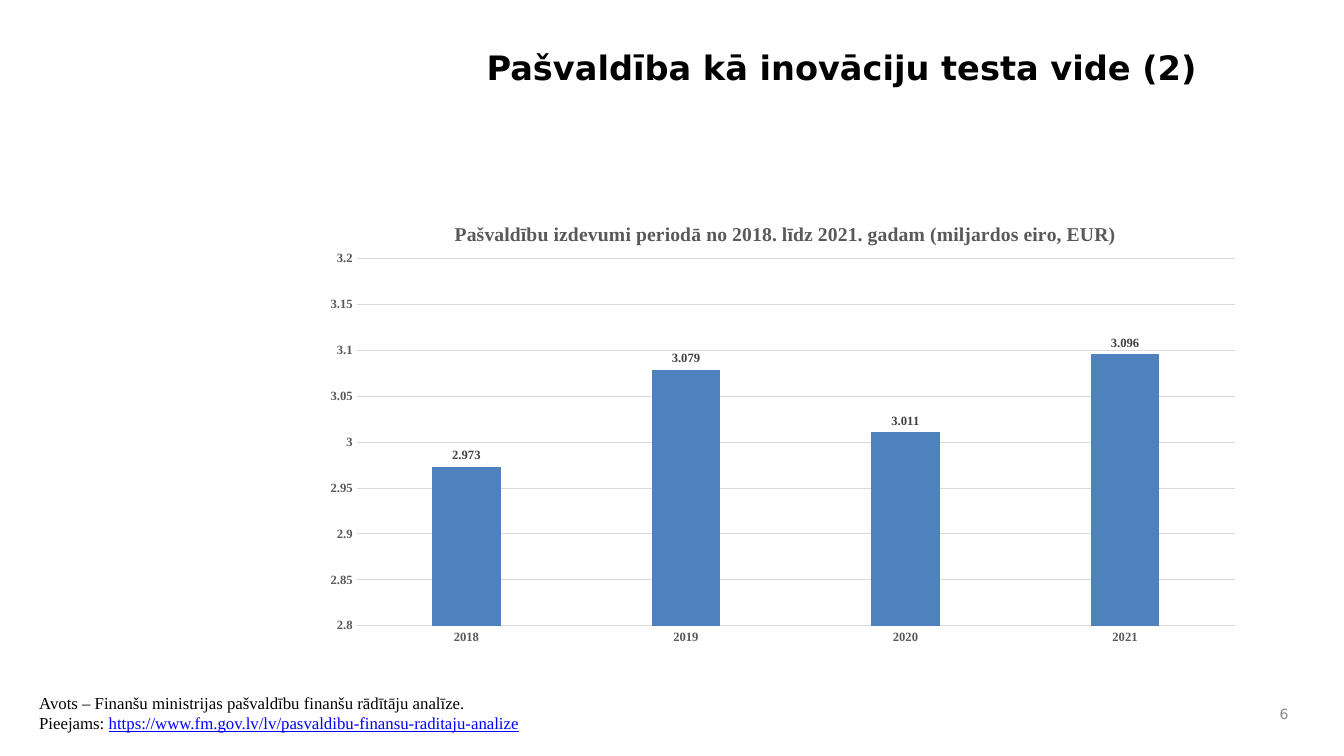
from pptx import Presentation
from pptx.chart.data import CategoryChartData
from pptx.dml.color import RGBColor
from pptx.enum.chart import XL_CHART_TYPE, XL_LABEL_POSITION, XL_TICK_MARK
from pptx.enum.text import MSO_ANCHOR, PP_ALIGN
from pptx.oxml import parse_xml
from pptx.oxml.ns import nsdecls, qn
from pptx.util import Pt

TITLE = "Pašvaldība kā inovāciju testa vide (2)"
PAGE_NUMBER = "6"
CHART_TITLE = "Pašvaldību izdevumi periodā no 2018. līdz 2021. gadam (miljardos eiro, EUR)"
SPENDING = {"2018": 2.973, "2019": 3.079, "2020": 3.011, "2021": 3.096}
# Each source line is a list of (text, style name)
SOURCE = [
    [("Avots – Finanšu ministrijas pašvaldību finanšu rādītāju analīze.", "source")],
    [("Pieejams: ", "source"),
     ("https://www.fm.gov.lv/lv/pasvaldibu-finansu-raditaju-analize", "address")],
]

SLIDE_SIZE = (960, 540)
# Left, top, width, height in points
BOXES = {
    "title": (324, 30.24, 554.4, 81.36),
    "chart": (221, 139, 674.6, 327.6),
    "source": (20.9, 491, 519, 36),
    "page": (895.7, 498.2, 31.7, 23.8),
}
SANS, SERIF = "DejaVu Sans", "Times New Roman"
THEME = {
    "bar": "4F81BD",
    "grid": "D9D9D9",
    "grid_width": 0.75,
    "fonts": {
        "title": {"name": SANS, "size": 24, "color": "000000", "bold": True},
        "page": {"name": SANS, "size": 10, "color": "898989"},
        "chart": {"name": SERIF, "size": 10, "color": "000000"},
        "chart_title": {"name": SERIF, "size": 14, "color": "595959", "bold": True},
        "axis": {"name": SERIF, "size": 9, "color": "595959", "bold": True},
        "label": {"name": SERIF, "size": 9, "color": "404040", "bold": True},
        "source": {"name": SERIF, "size": 12, "color": "000000"},
        "address": {"name": SERIF, "size": 12, "color": "0000FF", "underline": True},
    },
}


def style_font(font, style):
    for key, value in THEME["fonts"][style].items():
        if key == "color":
            font.color.rgb = RGBColor.from_string(value)
        else:
            setattr(font, key, Pt(value) if key == "size" else value)


def box(name):
    return [Pt(length) for length in BOXES[name]]


def add_text(slide, name, lines, **frame_format):
    frame = slide.shapes.add_textbox(*box(name)).text_frame
    frame.word_wrap = True
    for key, value in frame_format.items():
        setattr(frame, key, value)
    for index, line in enumerate(lines):
        paragraph = frame.add_paragraph() if index else frame.paragraphs[0]
        for text, style in line:
            run = paragraph.add_run()
            run.text = text
            style_font(run.font, style)
    return frame


def place_part(part, index, **fractions):
    """Fix a chart part's place, as fractions of the chart's size."""
    for layout in part.findall(qn("c:layout")):
        part.remove(layout)
    target = '<c:layoutTarget val="inner"/>' if "w" in fractions else ""
    modes = "".join(f'<c:{key}Mode val="edge"/>' for key in "xy")
    values = "".join(f'<c:{key} val="{value}"/>' for key, value in fractions.items())
    part.insert(index, parse_xml(
        f'<c:layout {nsdecls("c")}><c:manualLayout>{target}{modes}{values}'
        "</c:manualLayout></c:layout>"))


def style_grid_line(line):
    line.color.rgb = RGBColor.from_string(THEME["grid"])
    line.width = Pt(THEME["grid_width"])


def add_spending_chart(slide):
    spending = CategoryChartData(number_format="General")
    spending.categories = list(SPENDING)
    spending.add_series("Series 1", list(SPENDING.values()))
    chart = slide.shapes.add_chart(
        XL_CHART_TYPE.COLUMN_CLUSTERED, *box("chart"), spending).chart
    style_font(chart.font, "chart")
    chart.has_legend = False

    heading = chart.chart_title.text_frame.paragraphs[0].add_run()
    heading.text = CHART_TITLE
    style_font(heading.font, "chart_title")
    chart.chart_title.include_in_layout = False
    place_part(chart.element.find(".//" + qn("c:title")), 1, x=0.15, y=0.05)
    place_part(chart.element.find(".//" + qn("c:plotArea")), 0,
               x=0.05, y=0.14, w=0.93, h=0.8)

    years, amounts = chart.category_axis, chart.value_axis
    for axis in (years, amounts):
        axis.major_tick_mark = axis.minor_tick_mark = XL_TICK_MARK.NONE
        style_font(axis.tick_labels.font, "axis")
    style_grid_line(years.format.line)
    style_grid_line(amounts.major_gridlines.format.line)
    amounts.format.line.fill.background()
    for key, value in {"minimum_scale": 2.8, "maximum_scale": 3.2, "major_unit": 0.05}.items():
        setattr(amounts, key, value)

    plot = chart.plots[0]
    for key, value in {"gap_width": 219, "overlap": -27, "vary_by_categories": False,
                       "has_data_labels": True}.items():
        setattr(plot, key, value)
    plot.data_labels.show_value = True
    plot.data_labels.position = XL_LABEL_POSITION.OUTSIDE_END
    style_font(plot.data_labels.font, "label")
    bars = plot.series[0].format.fill
    bars.solid()
    bars.fore_color.rgb = RGBColor.from_string(THEME["bar"])


def main():
    deck = Presentation()
    deck.slide_width, deck.slide_height = [Pt(side) for side in SLIDE_SIZE]
    slide = deck.slides.add_slide(deck.slide_layouts[5])

    title = slide.shapes.title
    title.left, title.top, title.width, title.height = box("title")
    title.text_frame.text = TITLE
    title.text_frame.vertical_anchor = MSO_ANCHOR.TOP
    heading = title.text_frame.paragraphs[0]
    heading.alignment = PP_ALIGN.CENTER
    style_font(heading.runs[0].font, "title")

    add_spending_chart(slide)
    add_text(slide, "source", SOURCE)
    page = add_text(slide, "page", [[(PAGE_NUMBER, "page")]],
                    vertical_anchor=MSO_ANCHOR.MIDDLE)
    page.paragraphs[0].alignment = PP_ALIGN.RIGHT
    deck.save("out.pptx")


if __name__ == "__main__":
    main()
